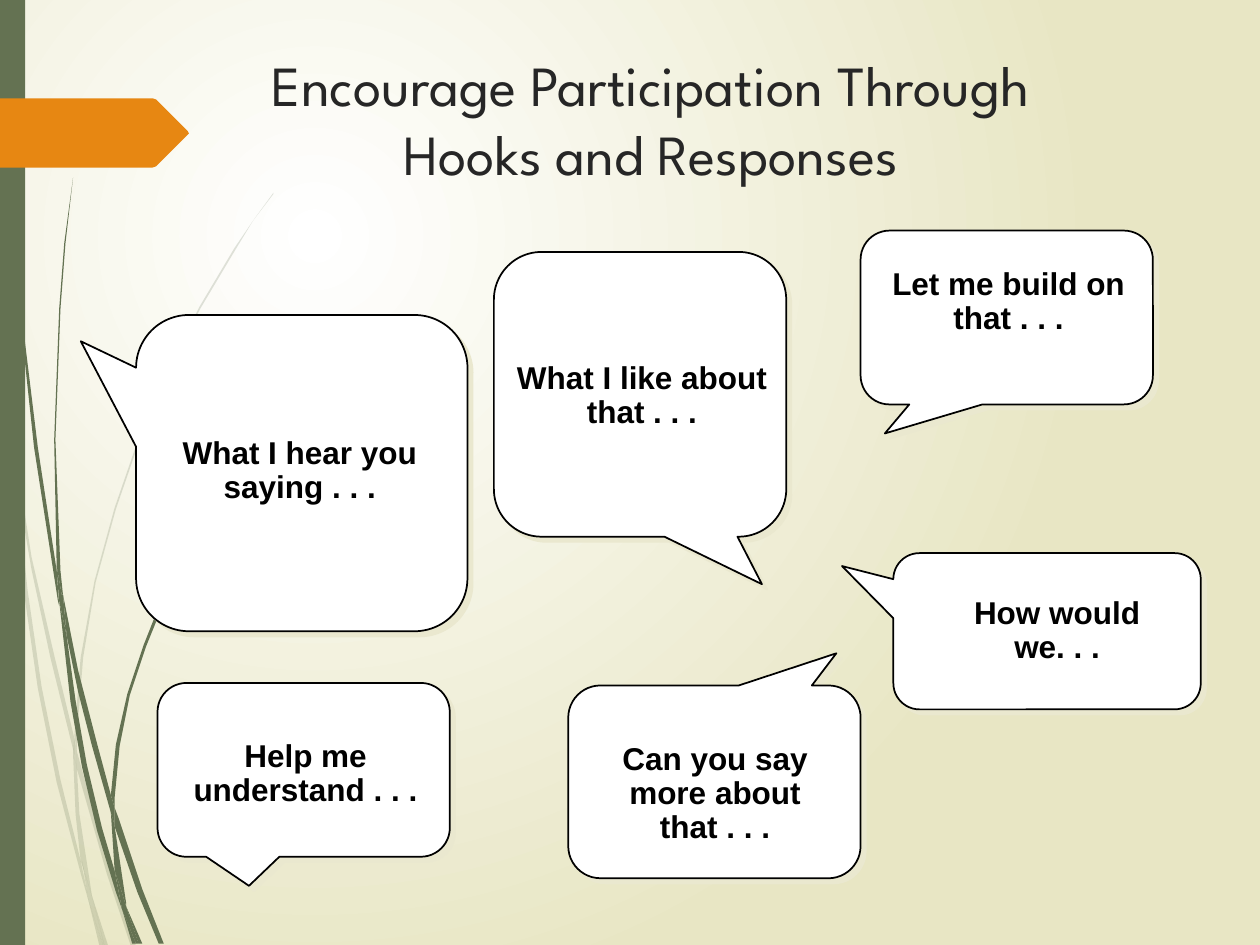
import dataclasses
import typing

import lxml.etree
import pptx
import pptx.dml.color
import pptx.enum.shapes
import pptx.enum.text
import pptx.oxml.ns
import pptx.util

Inches = pptx.util.Inches
Pt = pptx.util.Pt
qn = pptx.oxml.ns.qn

COLORS = {
    "paper": "FFFFFF",
    "sand": "E8E6C4",
    "moss": "647252",
    "orange": "E78712",
    "title": "262626",
    "ink": "000000",
    "shadow": "EAE8CF",
}

Points = list[tuple[float, float]]
Box = tuple[float, float, float, float]


@dataclasses.dataclass
class Bubble:
    text: str
    box: Box
    text_box: Box
    tail: float = -0.417
    rotation: int = 0
    mirrored: bool = False


BUBBLES = [
    Bubble("Let me build on that . . .", (6.83, 1.83, 2.32, 1.38), (6.83, 2.08, 2.35, 0.64)),
    Bubble("What I hear you saying . . .", (1.14, 2.44, 2.51, 2.63), (1.33, 3.42, 2.1, 0.64),
           rotation=90),
    Bubble("What I like about that . . .", (3.92, 2, 2.32, 2.26), (3.92, 2.83, 2.35, 0.64),
           mirrored=True),
    Bubble("Help me understand . . .", (1.25, 5.42, 2.32, 1.38), (1.25, 5.83, 2.35, 0.64),
           tail=-0.187),
    Bubble("Can you say more about that . . .", (4.51, 5.44, 2.32, 1.53), (4.68, 5.85, 1.99, 0.91),
           rotation=180),
    Bubble("How would\vwe. . .", (7.69, 3.79, 1.24, 2.44), (7.34, 4.69, 2.1, 0.64),
           rotation=90),
]

PALE_GRASS: list[Points] = [
    [(0.08, 3.5), (0.06, 3.22), (0, 2.82), (0, 2.99), (0.07, 3.44)],
    [(0.4, 5.22), (0.59, 5.99), (0.59, 5.86), (0.43, 5.2), (0.25, 4.42), (0.1, 3.45),
     (0.12, 3.76), (0.25, 4.52)],
    [(0.64, 6.07), (0.61, 5.96), (0.61, 6.1), (0.85, 6.94), (1.04, 7.51), (1.08, 7.51),
     (0.88, 6.92)],
    [(0.83, 7.51), (0.86, 7.51), (0.73, 7.11)],
    [(0.64, 6.83), (0.48, 6.19), (0.33, 5.45), (0.22, 4.69), (0.12, 3.76), (0.08, 3.5),
     (0.19, 4.7), (0.3, 5.46), (0.45, 6.21), (0.64, 6.93), (0.7, 7.14), (0.69, 7.07)],
    [(0.58, 5.99), (0.6, 6.46), (0.64, 6.83), (0.73, 7.11), (0.63, 6.46), (0.61, 6.08)],
    [(0.61, 5.84), (0.66, 5.22), (0.76, 4.62), (0.92, 4.04), (1.11, 3.49), (1.34, 2.95),
     (1.59, 2.45), (1.87, 1.98), (2.01, 1.75), (2.17, 1.54), (2.17, 1.53), (2.01, 1.75),
     (1.86, 1.97), (1.58, 2.44), (1.33, 2.94), (1.1, 3.48), (0.91, 4.03), (0.75, 4.61),
     (0.64, 5.22), (0.59, 5.84), (0.61, 5.96)],
    [(0.7, 7.14), (0.79, 7.51), (0.82, 7.51)],
    [(0.61, 6.08), (0.61, 6.1), (0.61, 5.96), (0.59, 5.86), (0.58, 5.99)],
    [(0.67, 6.92), (0.65, 6.83), (0.69, 7.07), (0.7, 7.14), (0.82, 7.51), (0.83, 7.51),
     (0.73, 7.11)],
]

DARK_GRASS: list[Points] = [
    [(0.05, 1.1), (0.14, 2.33), (0.27, 3.55), (0.46, 4.77), (0.47, 4.81), (0.45, 4.53),
     (0.3, 3.55), (0.15, 2.32), (0.06, 1.09), (0.03, 0), (0.02, 0), (0.03, 0.48)],
    [(0.73, 5.92), (0.88, 6.45), (0.88, 6.31), (0.77, 5.9), (0.62, 5.32), (0.5, 4.72),
     (0.53, 5.05), (0.62, 5.49)],
    [(0.94, 6.49), (0.91, 6.41), (0.91, 6.56), (1.09, 7.08), (1.26, 7.49), (1.3, 7.49),
     (1.13, 7.06)],
    [(0.91, 6.91), (0.81, 6.57), (0.69, 6.07), (0.6, 5.56), (0.53, 5.05), (0.47, 4.77),
     (0.56, 5.57), (0.65, 6.08), (0.77, 6.59), (0.92, 7.08), (0.97, 7.22), (0.96, 7.17)],
    [(0.5, 4.72), (0.48, 4.53), (0.44, 3.49), (0.48, 2.45), (0.52, 1.93), (0.58, 1.41),
     (0.51, 1.93), (0.47, 2.45), (0.43, 3.49), (0.45, 4.49), (0.49, 4.72)],
    [(1.1, 7.49), (1.13, 7.49), (1, 7.19)],
    [(0.47, 4.77), (0.53, 5.05), (0.5, 4.72), (0.49, 4.72), (0.45, 4.49), (0.45, 4.53)],
    [(0.91, 6.33), (0.95, 5.92), (1.03, 5.52), (1.16, 5.13), (1.31, 4.76), (1.49, 4.4),
     (1.69, 4.06), (1.91, 3.74), (2.03, 3.59), (2.16, 3.44), (2.15, 3.44), (2.03, 3.58),
     (1.91, 3.73), (1.68, 4.05), (1.47, 4.39), (1.29, 4.74), (1.14, 5.12), (1.01, 5.51),
     (0.92, 5.91), (0.88, 6.31), (0.91, 6.41)],
    [(0.97, 7.22), (1.05, 7.49), (1.08, 7.49)],
    [(0.88, 6.45), (0.91, 6.91), (0.96, 7.06), (1, 7.19), (1, 7.16), (0.91, 6.56),
     (0.9, 6.51)],
    [(0.88, 6.45), (0.9, 6.51), (0.91, 6.56), (0.91, 6.41), (0.88, 6.31)],
    [(0.96, 7.06), (0.91, 6.91), (0.96, 7.17), (0.97, 7.22), (1.08, 7.49), (1.1, 7.49),
     (1, 7.19)],
]

ARROW_TAB: Points = [(0, 0.78), (1.21, 0.78), (1.24, 0.79), (1.49, 1.04), (1.5, 1.06),
                     (1.49, 1.07), (1.24, 1.32), (1.21, 1.33), (0, 1.33)]


def rgb(name: str) -> pptx.dml.color.RGBColor:
    return pptx.dml.color.RGBColor.from_string(COLORS[name])


def paint(shape: typing.Any, color: str) -> None:
    """Give a shape a plain fill with neither outline nor shadow."""
    shape.fill.solid()
    shape.fill.fore_color.rgb = rgb(color)
    shape.line.fill.background()
    shape.shadow.inherit = False


def draw_outline(slide: typing.Any, points: Points, color: str, opacity: int = 100) -> None:
    corners = [(Inches(x), Inches(y)) for x, y in points]
    builder = slide.shapes.build_freeform(*corners[0])
    builder.add_line_segments(corners[1:], close=True)
    outline = builder.convert_to_shape()
    paint(outline, color)
    if opacity < 100:
        tint = outline.element.spPr.find(".//" + qn("a:srgbClr"))
        lxml.etree.SubElement(tint, qn("a:alpha"), val=str(opacity * 1000))


def draw_background(slide: typing.Any) -> None:
    """Fill the slide with a round gradient centred in its upper left quarter."""
    fill = slide.background.fill
    fill.gradient()
    for stop, position, color in zip(fill.gradient_stops, (0, 1), ("paper", "sand")):
        stop.position = position
        stop.color.rgb = rgb(color)
    gradient = slide.element.find(".//" + qn("a:gradFill"))
    gradient.remove(gradient.find(qn("a:lin")))
    circle = lxml.etree.SubElement(gradient, qn("a:path"), path="circle")
    lxml.etree.SubElement(circle, qn("a:fillToRect"), l="50000", t="50000", r="100000", b="100000")


def draw_bubble(slide: typing.Any, bubble: Bubble) -> None:
    callout = slide.shapes.add_shape(
        pptx.enum.shapes.MSO_SHAPE.ROUNDED_RECTANGULAR_CALLOUT, *map(Inches, bubble.box))
    for index, value in enumerate((bubble.tail, 0.667, 0.167)):
        callout.adjustments[index] = value
    paint(callout, "paper")
    callout.line.color.rgb = rgb("ink")
    callout.line.width = Pt(1)
    callout.rotation = bubble.rotation
    properties = callout.element.spPr
    if bubble.mirrored:
        properties.find(qn("a:xfrm")).set("flipH", "1")
    shadow = lxml.etree.SubElement(
        properties.find(qn("a:effectLst")), qn("a:outerShdw"),
        dist=str(Pt(4.2)), dir=str(45 * 60000), algn="ctr", rotWithShape="0")
    lxml.etree.SubElement(shadow, qn("a:srgbClr"), val=COLORS["shadow"])


def write_text(slide: typing.Any, text: str, box: Box, color: str, spacing: float,
               font: dict[str, typing.Any], side_inset: float = 0.1) -> None:
    frame = slide.shapes.add_textbox(*map(Inches, box)).text_frame
    frame.word_wrap = True
    frame.margin_left = frame.margin_right = Inches(side_inset)
    frame.text = text
    paragraph = frame.paragraphs[0]
    paragraph.alignment = pptx.enum.text.PP_ALIGN.CENTER
    paragraph.line_spacing = spacing
    for run in paragraph.runs:
        run.font.color.rgb = rgb(color)
        for name, value in font.items():
            setattr(run.font, name, value)


def main() -> None:
    deck = pptx.Presentation()
    deck.slide_width, deck.slide_height = Inches(10), Inches(7.5)
    slide = deck.slides.add_slide(deck.slide_layouts[6])
    draw_background(slide)
    for blade in PALE_GRASS:
        draw_outline(slide, blade, "moss", opacity=20)
    for blade in DARK_GRASS:
        draw_outline(slide, blade, "moss")
    side_bar = slide.shapes.add_shape(
        pptx.enum.shapes.MSO_SHAPE.RECTANGLE, 0, 0, Inches(0.2), deck.slide_height)
    paint(side_bar, "moss")
    draw_outline(slide, ARROW_TAB, "orange")
    write_text(slide, "Encourage Participation Through Hooks and Responses",
               (1.56, 0.35, 7.21, 1.4), "title", 1.0,
               {"name": "League Spartan", "size": Pt(32.4)}, side_inset=0.07)
    for bubble in BUBBLES:
        draw_bubble(slide, bubble)
    for bubble in BUBBLES:
        write_text(slide, bubble.text, bubble.text_box, "ink", 0.9,
                   {"name": "Arial", "size": Pt(18), "bold": True})
    deck.save("out.pptx")


if __name__ == "__main__":
    main()
